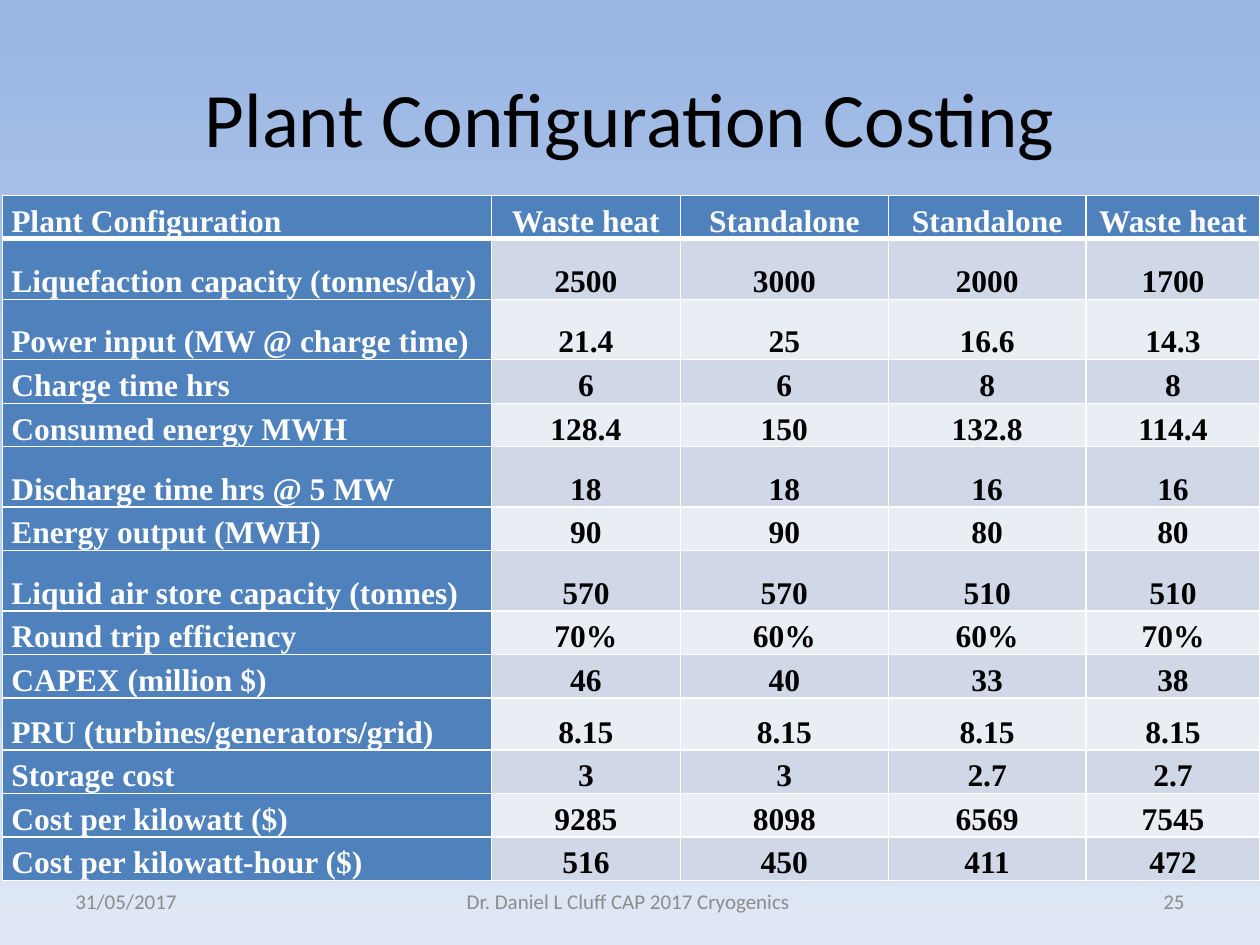
from copy import deepcopy

from lxml.etree import SubElement
from pptx import Presentation
from pptx.dml.color import RGBColor
from pptx.enum.text import MSO_ANCHOR as Anchor, PP_ALIGN as Align
from pptx.oxml.ns import qn
from pptx.util import Inches, Pt

COLORS = {
    "sky_top": "9AB5E4", "sky_middle": "C6D9F1", "sky_bottom": "E1E8F5",
    "black": "000000", "white": "FFFFFF", "footer": "8C8C8C",
    "heading": "4F81BD", "odd_band": "D0D8E8", "even_band": "E9EDF4",
}
SKY_STOPS = [("sky_top", 0), ("sky_middle", 0.73), ("sky_bottom", 1)]
COLUMN_WIDTHS = [3.88, 1.5, 1.65, 1.57, 1.38]
SHORT, MEDIUM, TALL = 0.25, 0.41, 0.48
COSTING = [
    (SHORT, "Plant Configuration", "Waste heat", "Standalone", "Standalone", "Waste heat"),
    (TALL, "Liquefaction capacity (tonnes/day)", "2500", "3000", "2000", "1700"),
    (TALL, "Power input (MW @ charge time)", "21.4", "25", "16.6", "14.3"),
    (SHORT, "Charge time hrs", "6", "6", "8", "8"),
    (SHORT, "Consumed energy MWH", "128.4", "150", "132.8", "114.4"),
    (TALL, "Discharge time hrs @ 5 MW", "18", "18", "16", "16"),
    (SHORT, "Energy output (MWH)", "90", "90", "80", "80"),
    (TALL, "Liquid air store capacity (tonnes)", "570", "570", "510", "510"),
    (SHORT, "Round trip efficiency", "70%", "60%", "60%", "70%"),
    (SHORT, "CAPEX (million $)", "46", "40", "33", "38"),
    (MEDIUM, "PRU (turbines/generators/grid)", "8.15", "8.15", "8.15", "8.15"),
    (SHORT, "Storage cost", "3", "3", "2.7", "2.7"),
    (SHORT, "Cost per kilowatt ($)", "9285", "8098", "6569", "7545"),
    (SHORT, "Cost per kilowatt-hour ($)", "516", "450", "411", "472"),
]


def color(name):
    return RGBColor.from_string(COLORS[name])


def style_paragraph(para, font_name, size, color_name, align, bold=False):
    para.alignment = align
    para.font.name = font_name
    para.font.size = Pt(size)
    para.font.bold = bold
    para.font.color.rgb = color(color_name)


def paint_background(page):
    fill = page.background.fill
    fill.gradient()
    fill.gradient_angle = 270
    stop_list = page.element.find(".//" + qn("a:gsLst"))
    stop_list.append(deepcopy(stop_list[0]))
    for stop, (name, position) in zip(fill.gradient_stops, SKY_STOPS):
        stop.color.rgb = color(name)
        stop.position = position


def add_text(page, text, left, top, width, height, size, color_name, align):
    box = page.shapes.add_textbox(Inches(left), Inches(top), Inches(width), Inches(height))
    frame = box.text_frame
    frame.word_wrap = True
    frame.vertical_anchor = Anchor.MIDDLE
    frame.text = text
    style_paragraph(frame.paragraphs[0], "Calibri", size, color_name, align)


def add_borders(cell, top_width, bottom_width):
    properties = cell._tc.get_or_add_tcPr()
    sides = {"a:lnL": 1, "a:lnR": 1, "a:lnT": top_width, "a:lnB": bottom_width}
    for side, width in sides.items():
        line = SubElement(properties, qn(side), w=str(Pt(width)))
        fill = SubElement(line, qn("a:solidFill"))
        SubElement(fill, qn("a:srgbClr"), val=COLORS["white"])


def fill_cell(cell, text, row_index, column_index):
    is_heading = row_index == 0 or column_index == 0
    band = "odd_band" if row_index % 2 else "even_band"
    add_borders(cell, 3 if row_index == 1 else 1, 3 if row_index == 0 else 1)
    cell.fill.solid()
    cell.fill.fore_color.rgb = color("heading" if is_heading else band)
    cell.margin_left = cell.margin_right = Inches(0.07)
    cell.margin_top = cell.margin_bottom = 0
    cell.vertical_anchor = Anchor.BOTTOM
    cell.text = text
    para = cell.text_frame.paragraphs[0]
    para.line_spacing = 1.15
    style_paragraph(para, "Times New Roman", 18, "white" if is_heading else "black",
                    Align.CENTER if column_index else Align.LEFT, bold=True)


def add_costing_table(page):
    frame = page.shapes.add_table(len(COSTING), len(COLUMN_WIDTHS), Inches(0.02),
                                  Inches(1.55), Inches(9.98), Inches(5.44))
    table = frame.table
    for column, width in zip(table.columns, COLUMN_WIDTHS):
        column.width = Inches(width)
    for row_index, (height, *texts) in enumerate(COSTING):
        table.rows[row_index].height = Inches(height)
        for column_index, text in enumerate(texts):
            fill_cell(table.cell(row_index, column_index), text, row_index, column_index)
    frame.height = Inches(5.44)


def main():
    deck = Presentation()
    deck.slide_width, deck.slide_height = Inches(10), Inches(7.5)
    page = deck.slides.add_slide(deck.slide_layouts[6])
    paint_background(page)
    add_text(page, "Plant Configuration Costing", 0.5, 0.3, 9, 1.25, 44, "black", Align.CENTER)
    footers = [
        ("31/05/2017", 0.5, 2.33, Align.LEFT),
        ("Dr. Daniel L Cluff CAP 2017 Cryogenics ", 3.42, 3.17, Align.CENTER),
        ("25", 7.17, 2.33, Align.RIGHT),
    ]
    for text, left, width, align in footers:
        add_text(page, text, left, 6.95, width, 0.4, 12, "footer", align)
    add_costing_table(page)
    deck.save("out.pptx")


if __name__ == "__main__":
    main()
